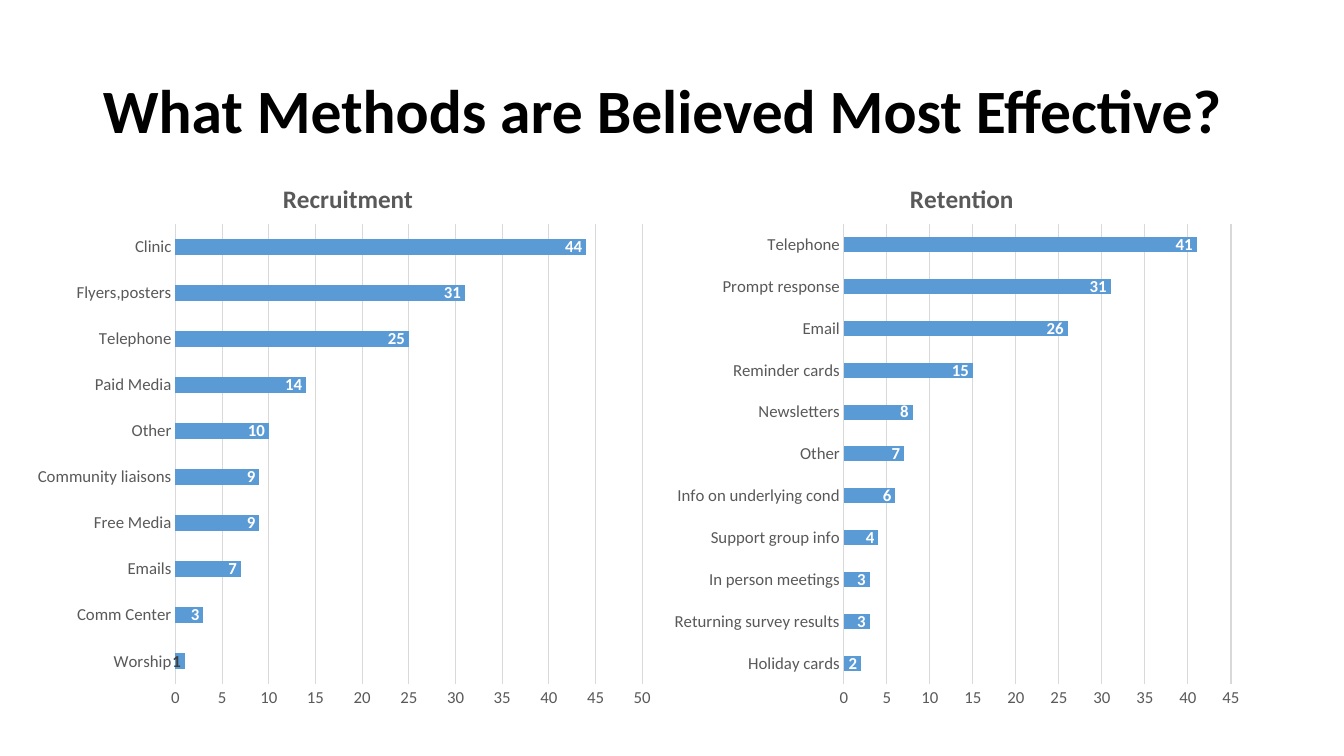
from dataclasses import dataclass

from pptx import Presentation
from pptx.chart.data import CategoryChartData as Data
from pptx.dml.color import RGBColor as RGB
from pptx.enum.chart import XL_CHART_TYPE as Kind
from pptx.enum.chart import XL_LABEL_POSITION as Spot
from pptx.enum.chart import XL_TICK_MARK as Tick
from pptx.enum.text import MSO_ANCHOR as Anchor
from pptx.enum.text import PP_ALIGN as Align
from pptx.oxml import parse_xml
from pptx.oxml.ns import nsdecls
from pptx.util import Pt

SCALE = 9144


@dataclass(frozen=True)
class Theme:
    face: str = "Calibri"
    ink: str = "000000"
    gray: str = "595959"
    dark: str = "404040"
    white: str = "FFFFFF"
    rule: str = "D9D9D9"
    bar: str = "5B9BD5"
    head: int = 44
    name: int = 18
    note: int = 12


THEME = Theme()

RECRUIT = {
    "Worship": 1,
    "Comm Center": 3,
    "Emails": 7,
    "Free Media": 9,
    "Community liaisons": 9,
    "Other": 10,
    "Paid Media": 14,
    "Telephone": 25,
    "Flyers,posters": 31,
    "Clinic": 44,
}
RETAIN = {
    "Holiday cards": 2,
    "Returning survey results": 3,
    "In person meetings": 3,
    "Support group info": 4,
    "Info on underlying cond": 6,
    "Other": 7,
    "Newsletters": 8,
    "Reminder cards": 15,
    "Email": 26,
    "Prompt response": 31,
    "Telephone": 41,
}


def px(*sizes):
    return [size * SCALE for size in sizes]


def style(font, size, color, bold=False):
    font.name = THEME.face
    font.size = Pt(size)
    font.bold = bold
    font.color.rgb = RGB.from_string(color)


def stroke(line):
    line.color.rgb = RGB.from_string(THEME.rule)
    line.width = Pt(0.75)


def place(node, index, **parts):
    for old in node.xpath("c:layout"):
        node.remove(old)
    inner = '<c:layoutTarget val="inner"/>' if "w" in parts else ""
    modes = "".join(f'<c:{key}Mode val="edge"/>' for key in "xy")
    sizes = "".join(f'<c:{key} val="{part:.4f}"/>' for key, part in parts.items())
    node.insert(index, parse_xml(
        f'<c:layout {nsdecls("c")}><c:manualLayout>{inner}{modes}{sizes}'
        "</c:manualLayout></c:layout>"))


def heading(slide, box, text):
    title = slide.shapes.title
    title.left, title.top, title.width, title.height = px(*box)
    frame = title.text_frame
    frame.text = text
    frame.word_wrap = True
    frame.vertical_anchor = Anchor.MIDDLE
    para = frame.paragraphs[0]
    para.alignment = Align.LEFT
    para.line_spacing = 0.9
    style(para.font, THEME.head, THEME.ink, True)


def axes(chart, top):
    for axis in (chart.category_axis, chart.value_axis):
        axis.major_tick_mark = axis.minor_tick_mark = Tick.NONE
        style(axis.tick_labels.font, THEME.note, THEME.gray)
    stroke(chart.category_axis.format.line)
    scale = chart.value_axis
    scale.minimum_scale, scale.maximum_scale, scale.major_unit = 0, top, 5
    scale.format.line.fill.background()
    stroke(scale.major_gridlines.format.line)


def bars(chart):
    plot = chart.plots[0]
    plot.gap_width = 182
    plot.vary_by_categories = False
    series = plot.series[0]
    series.format.fill.solid()
    series.format.fill.fore_color.rgb = RGB.from_string(THEME.bar)
    labels = series.data_labels
    labels.show_value = True
    labels.position = Spot.INSIDE_END
    style(labels.font, THEME.note, THEME.white, True)
    return series


def panel(slide, box, name, values, top, left, indent, span):
    data = Data()
    data.categories = list(values)
    data.add_series("Series 1", list(values.values()))
    chart = slide.shapes.add_chart(Kind.BAR_CLUSTERED, *px(*box), data).chart
    chart.has_legend = False
    style(chart.font, THEME.note, THEME.ink)
    chart.has_title = True
    frame = chart.chart_title.text_frame
    frame.text = name
    style(frame.paragraphs[0].font, THEME.name, THEME.gray, True)
    axes(chart, top)
    wide, high = box[2:]
    place(chart.element.xpath("c:chart/c:title")[0], 1,
          x=left / wide, y=25 / high)
    place(chart.element.xpath("c:chart/c:plotArea")[0], 0,
          x=indent / wide, y=72 / high, w=span / wide, h=457 / high)
    return bars(chart)


def main():
    deck = Presentation()
    deck.slide_width, deck.slide_height = px(1333, 750)
    slide = deck.slides.add_slide(deck.slide_layouts[5])
    heading(slide, (92, 40, 1150, 145), "What Methods are Believed Most Effective?")
    panel(slide, (658, 150, 584, 565), "Retention", RETAIN, 45, 240, 179, 384)
    series = panel(slide, (24, 150, 634, 565), "Recruitment", RECRUIT, 50, 252, 150, 463)
    label = series.points[0].data_label
    style(label.font, THEME.note, THEME.dark, True)
    label.position = Spot.INSIDE_END
    deck.save("out.pptx")


if __name__ == "__main__":
    main()
